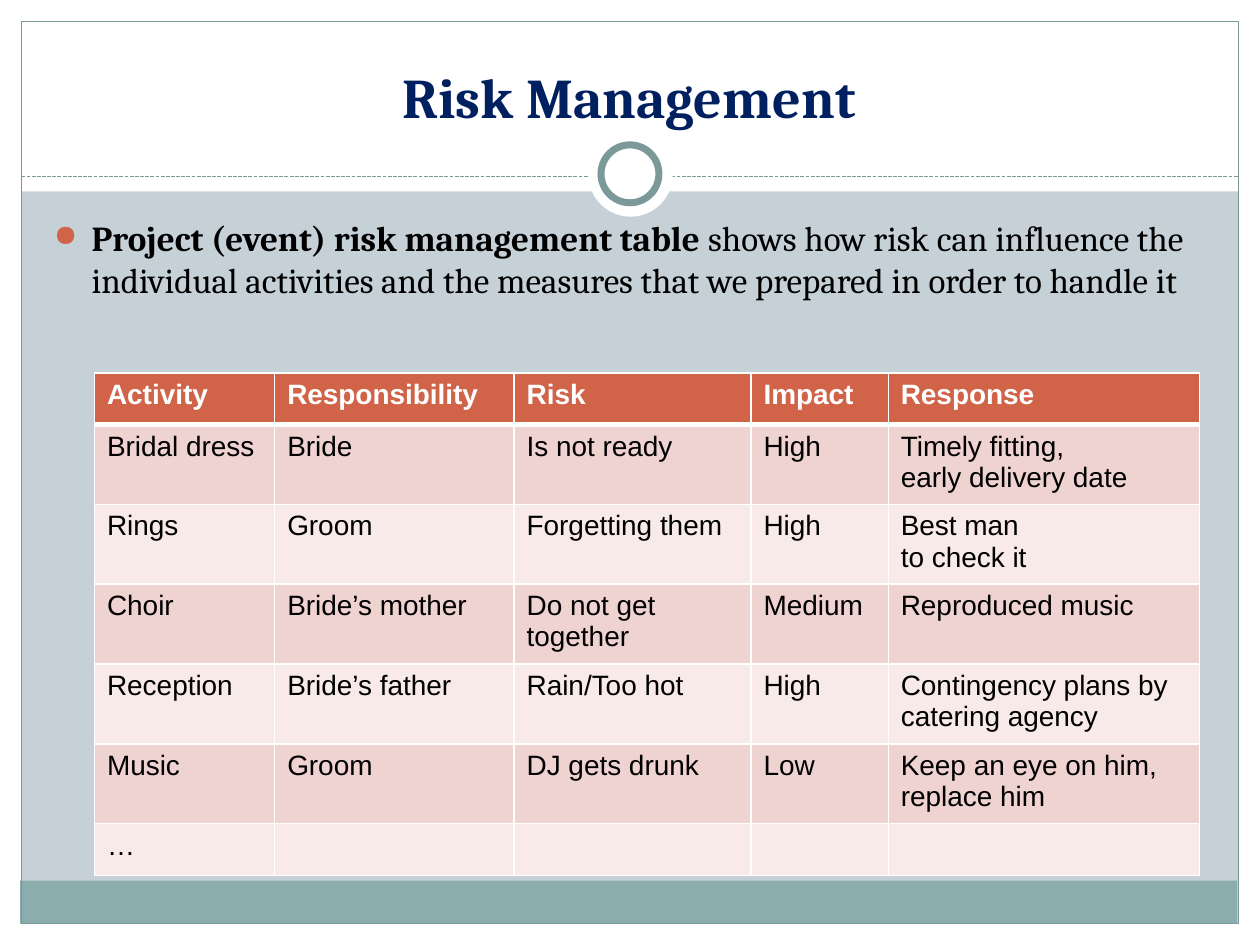
from lxml import etree
from pptx import Presentation
from pptx.dml.color import RGBColor
from pptx.enum.dml import MSO_LINE
from pptx.enum.shapes import MSO_CONNECTOR, MSO_SHAPE
from pptx.enum.text import MSO_ANCHOR, PP_ALIGN
from pptx.oxml.ns import qn
from pptx.util import Inches, Pt

RECT, OVAL = MSO_SHAPE.RECTANGLE, MSO_SHAPE.OVAL
STRAIGHT, DASH = MSO_CONNECTOR.STRAIGHT, MSO_LINE.SQUARE_DOT
BOTTOM, CENTER = MSO_ANCHOR.BOTTOM, PP_ALIGN.CENTER
TITLE_ONLY = 5

COLORS = {
    "back": "C5D1D7", "white": "FFFFFF", "black": "000000", "navy": "002060",
    "band": "8CADAE", "frame": "7C999A", "accent": "D16349",
    "odd": "EED3D0", "even": "F7EAE9",
}
MARGINS = [(0, 7.33, 10, 0.17), (0, 0, 10, 1.52),
           (0, 0, 0.17, 7.5), (9.83, 0, 0.17, 7.5)]
WIDTHS = [1.43, 1.9, 1.88, 1.09, 2.47]
HEIGHTS = [0.41] + [0.59] * 5 + [0.41]
RISKS = [
    ("Activity", "Responsibility", "Risk", "Impact", "Response"),
    ("Bridal dress", "Bride", "Is not ready", "High",
     "Timely fitting,\nearly delivery date"),
    ("Rings", "Groom", "Forgetting them", "High", "Best man\nto check it"),
    ("Choir", "Bride’s mother", "Do not get together", "Medium",
     "Reproduced music"),
    ("Reception", "Bride’s father", "Rain/Too hot", "High",
     "Contingency plans by catering agency"),
    ("Music", "Groom", "DJ gets drunk", "Low",
     "Keep an eye on him,\nreplace him"),
    ("…", "", "", "", ""),
]


def rgb(name):
    return RGBColor.from_string(COLORS[name])


def box(place):
    return [Inches(value) for value in place]


class Deck:
    """Holds the style and the current slide."""

    def __init__(self, width, height):
        self.file = Presentation()
        self.file.slide_width = Inches(width)
        self.file.slide_height = Inches(height)
        self.serif, self.sans = "Cambria", "Arial"

    def start(self, back):
        self.slide = self.file.slides.add_slide(
            self.file.slide_layouts[TITLE_ONLY])
        self.shapes = self.slide.shapes
        fill = self.slide.background.fill
        fill.solid()
        fill.fore_color.rgb = rgb(back)

    def font(self, para, name, size, color, bold=None):
        font = para.font
        font.name, font.size, font.bold = name, Pt(size), bold
        font.color.rgb = rgb(color)

    def shape(self, kind, place, fill=None, line=None, width=0.75):
        shape = self.shapes.add_shape(kind, *box(place))
        shape.shadow.inherit = False
        if fill:
            shape.fill.solid()
            shape.fill.fore_color.rgb = rgb(fill)
        else:
            shape.fill.background()
        if line:
            shape.line.color.rgb = rgb(line)
            shape.line.width = Pt(width)
        else:
            shape.line.fill.background()

    def rule(self, ends, color):
        line = self.shapes.add_connector(STRAIGHT, *box(ends))
        line.line.color.rgb = rgb(color)
        line.line.width = Pt(0.75)
        line.line.dash_style = DASH
        etree.SubElement(line.element.spPr, qn("a:effectLst"))

    def title(self, place, text):
        """Fill the title and bring it in front of the shapes drawn so far."""
        title = self.shapes.title
        title.left, title.top, title.width, title.height = box(place)
        frame = title.text_frame
        frame.text = text
        frame.vertical_anchor = BOTTOM
        para = frame.paragraphs[0]
        para.alignment = CENTER
        self.font(para, self.serif, 32, "navy", True)
        self.shapes.element.append(title.element)

    def bullet(self, place, parts):
        """Add one bulleted paragraph from pairs of text and bold."""
        frame = self.shapes.add_textbox(*box(place)).text_frame
        frame.word_wrap = True
        para = frame.paragraphs[0]
        para.space_after = Pt(12)
        self.font(para, self.serif, 20, "black")
        for text, bold in parts:
            run = para.add_run()
            run.text, run.font.bold = text, bold
        props = para._p.get_or_add_pPr()
        props.set("marL", str(Inches(0.3)))
        props.set("indent", str(-Inches(0.3)))
        color = etree.Element(qn("a:buClr"))
        etree.SubElement(color, qn("a:srgbClr"), val=COLORS["accent"])
        size = etree.Element(qn("a:buSzPct"), val="85000")
        char = etree.Element(qn("a:buChar"), char="●")
        base = props.find(qn("a:defRPr"))
        for item in (color, size, char):
            base.addprevious(item)

    def border(self, cell, top, bottom):
        props = cell._tc.get_or_add_tcPr()
        for side, width in zip("LRTB", (1, 1, top, bottom)):
            line = etree.SubElement(props, qn(f"a:ln{side}"), w=str(Pt(width)))
            fill = etree.SubElement(line, qn("a:solidFill"))
            etree.SubElement(fill, qn("a:srgbClr"), val=COLORS["white"])

    def table(self, left, top, widths, heights, rows):
        place = (left, top, sum(widths), sum(heights))
        table = self.shapes.add_table(
            len(rows), len(widths), *box(place)).table
        for col, width in zip(table.columns, widths):
            col.width = Inches(width)
        for r, texts in enumerate(rows):
            table.rows[r].height = Inches(heights[r])
            head = r == 0
            fill = "accent" if head else "odd" if r % 2 else "even"
            for c, text in enumerate(texts):
                cell = table.cell(r, c)
                self.border(cell, 3 if r == 1 else 1, 3 if head else 1)
                cell.fill.solid()
                cell.fill.fore_color.rgb = rgb(fill)
                cell.text = text
                for para in cell.text_frame.paragraphs:
                    self.font(para, self.sans, 16,
                              "white" if head else "black", head)


def main():
    deck = Deck(10, 7.5)
    deck.start("back")
    for place in MARGINS:
        deck.shape(RECT, place, "white")
    deck.shape(RECT, (0.16, 6.99, 9.66, 0.34), "band")
    deck.shape(RECT, (0.17, 0.17, 9.66, 7.16), line="frame")
    deck.rule((0.17, 1.4, 9.83, 1.4), "frame")
    deck.shape(OVAL, (4.67, 1.05, 0.67, 0.67), "white")
    deck.shape(OVAL, (4.77, 1.15, 0.46, 0.46), "white", "frame", 4)
    deck.title((0.33, 0.25, 9.33, 0.83), "Risk Management")
    deck.bullet((0.33, 1.67, 9.24, 5), [
        ("Project (event) risk management table ", True),
        ("shows how risk can influence the individual activities and the "
         "measures that we prepared in order to handle it", False),
    ])
    deck.table(0.75, 2.96, WIDTHS, HEIGHTS, RISKS)
    deck.file.save("out.pptx")


if __name__ == "__main__":
    main()
